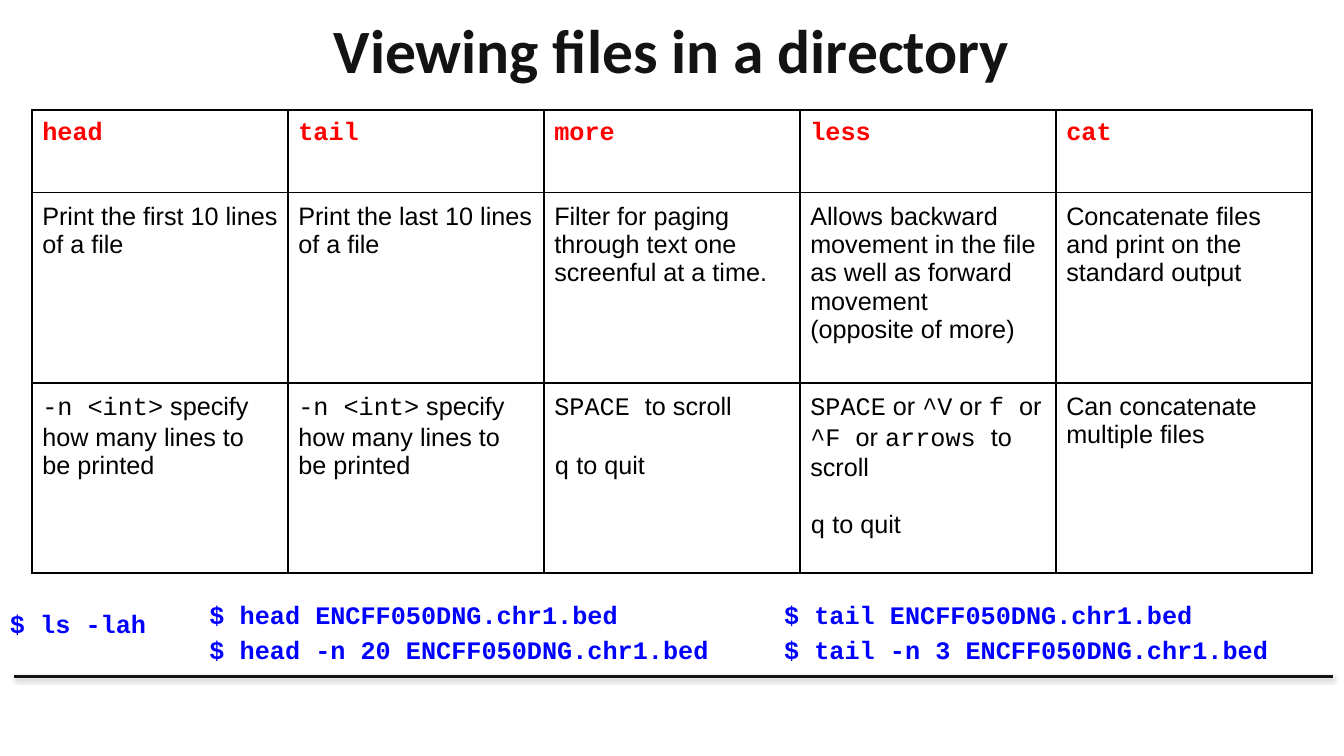
from lxml.etree import SubElement
from pptx import Presentation
from pptx.dml.color import RGBColor
from pptx.enum.shapes import MSO_CONNECTOR as Connector
from pptx.enum.text import MSO_ANCHOR as Anchor, MSO_AUTO_SIZE as AutoSize, PP_ALIGN as Align
from pptx.oxml import parse_xml
from pptx.oxml.ns import nsdecls, qn
from pptx.util import Pt

TITLE_ONLY = 5
INK, BLACK, RED, BLUE = "141313", "000000", "FF0000", "0000FF"
BODY, MONO = "Arial", "Courier New"
BLANK_LINE = 20.5

COMMANDS = ["head", "tail", "more", "less", "cat"]
PURPOSES = [
    "Print the first 10 lines of a file",
    "Print the last 10 lines of a file",
    "Filter for paging through text one screenful at a time.",
    "Allows backward movement in the file as well as forward movement\n(opposite of more)",
    "Concatenate files and print on the standard output",
]
LINE_COUNT = "`-n <int>` specify how many lines to be printed"
QUIT = "`q` to quit"
USAGES = [
    LINE_COUNT,
    LINE_COUNT,
    f"`SPACE `to scroll\n{QUIT}",
    f"`SPACE` or `^V` or `f `or `^F `or `arrows `to scroll\n{QUIT}",
    "Can concatenate multiple files",
]


def color(hex_string):
    return RGBColor.from_string(hex_string)


def write(frame, text, size=18, font=BODY, ink=BLACK, bold=False, align=Align.LEFT,
          spacing=None, gap=0):
    """Fill a frame: one paragraph per line, with `backticks` around monospaced parts."""
    for index, line in enumerate(text.split("\n")):
        paragraph = frame.add_paragraph() if index else frame.paragraphs[0]
        paragraph.alignment = align
        paragraph.line_spacing = spacing
        paragraph.space_before = Pt(gap if index else 0)
        for part, words in enumerate(line.split("`")):
            if words:
                run = paragraph.add_run()
                run.text = words
                run.font.name = MONO if part % 2 else font
                run.font.size = Pt(size)
                run.font.bold = bold
                run.font.color.rgb = color(ink)


class CommandSlide:
    inset = Pt(7.2)
    border = Pt(1.5)

    def __init__(self, deck):
        self.slide = deck.slides.add_slide(deck.slide_layouts[TITLE_ONLY])
        self.shapes = self.slide.shapes

    def title(self, text, left, top, width, height):
        heading = self.shapes.title
        heading.left, heading.top = Pt(left), Pt(top)
        heading.width, heading.height = Pt(width), Pt(height)
        frame = heading.text_frame
        frame.auto_size = AutoSize.NONE
        frame.vertical_anchor = Anchor.MIDDLE
        write(frame, text, size=44, font="Calibri", ink=INK, bold=True, align=Align.CENTER)

    def rule(self, left, right, y):
        """Draw a horizontal line with a soft shadow below it."""
        rule = self.shapes.add_connector(Connector.STRAIGHT, Pt(left), Pt(y), Pt(right), Pt(y))
        rule.line.color.rgb = color(INK)
        rule.line.width = Pt(2)
        rule.element.spPr.append(parse_xml(
            f'<a:effectLst {nsdecls("a")}><a:outerShdw blurRad="{Pt(3.1)}" dist="{Pt(1.6)}" '
            f'dir="5400000" rotWithShape="0"><a:srgbClr val="{BLACK}">'
            '<a:alpha val="38000"/></a:srgbClr></a:outerShdw></a:effectLst>'))

    def set_insets(self, holder):
        holder.margin_left = holder.margin_right = self.inset
        holder.margin_top = holder.margin_bottom = self.inset

    def outline(self, cell):
        properties = cell._tc.get_or_add_tcPr()
        for side in ("a:lnL", "a:lnR", "a:lnT", "a:lnB"):
            edge = SubElement(properties, qn(side), w=str(self.border))
            fill = SubElement(edge, qn("a:solidFill"))
            SubElement(fill, qn("a:srgbClr"), val=BLACK)

    def table(self, rows, left, top, column_width, row_heights):
        """Draw rows given as (texts, text format) pairs."""
        columns = len(rows[0][0])
        grid = self.shapes.add_table(len(rows), columns, Pt(left), Pt(top),
                                     Pt(column_width * columns), Pt(sum(row_heights))).table
        grid.horz_banding = False
        for column in grid.columns:
            column.width = Pt(column_width)
        for row, height, (texts, style) in zip(grid.rows, row_heights, rows):
            row.height = Pt(height)
            for cell, text in zip(row.cells, texts):
                self.set_insets(cell)
                self.outline(cell)
                cell.fill.background()
                write(cell.text_frame, text, **style)

    def shell(self, commands, left, top, width, height, spacing=None):
        frame = self.shapes.add_textbox(Pt(left), Pt(top), Pt(width), Pt(height)).text_frame
        frame.word_wrap = True
        self.set_insets(frame)
        write(frame, commands, font=MONO, ink=BLUE, bold=True, spacing=spacing)


def main():
    deck = Presentation()
    deck.slide_width, deck.slide_height = Pt(960), Pt(540)
    page = CommandSlide(deck)
    page.rule(10, 952, 483)
    page.title("Viewing files in a directory", 48, 0.7, 864, 69)
    page.table(
        [(COMMANDS, {"font": MONO, "ink": RED, "bold": True}),
         (PURPOSES, {}),
         (USAGES, {"gap": BLANK_LINE})],
        left=23, top=78.5, column_width=182.88, row_heights=[59, 136, 136])
    page.shell("$ ls -lah", 0, 427, 142.5, 40)
    page.shell("$ head ENCFF050DNG.chr1.bed\n$ head -n 20 ENCFF050DNG.chr1.bed",
               142.5, 417.5, 419, 60.5, spacing=1.15)
    page.shell("$ tail ENCFF050DNG.chr1.bed\n$ tail -n 3 ENCFF050DNG.chr1.bed",
               553, 417.5, 407, 60.5, spacing=1.15)
    deck.save("out.pptx")


if __name__ == "__main__":
    main()
